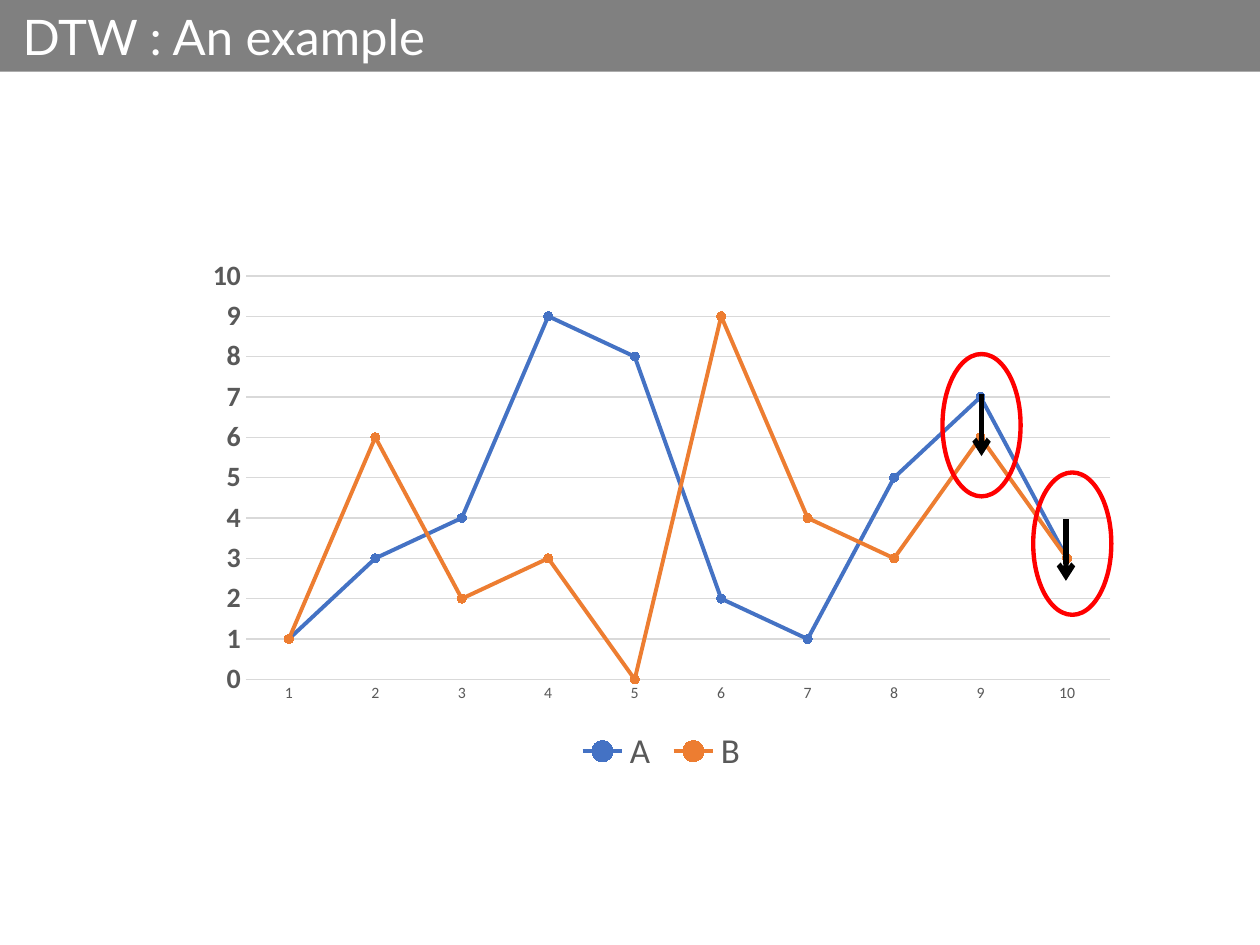
from pptx import Presentation
from pptx.chart.data import CategoryChartData as ChartData
from pptx.dml.color import RGBColor
from pptx.enum.chart import XL_CHART_TYPE as Kind, XL_LEGEND_POSITION as Place
from pptx.enum.chart import XL_MARKER_STYLE as Mark, XL_TICK_MARK as Tick
from pptx.enum.shapes import MSO_CONNECTOR as Link, MSO_SHAPE as Form
from pptx.enum.text import MSO_ANCHOR as Anchor, PP_ALIGN as Align
from pptx.oxml.ns import qn
from pptx.util import Inches, Pt
from lxml.etree import SubElement

TITLE = "DTW : An example"
SERIES = [
    ("A", [1, 3, 4, 9, 8, 2, 1, 5, 7, 3], "4472C4"),
    ("B", [1, 6, 2, 3, 0, 9, 4, 3, 6, 3], "ED7D31"),
]
ARROWS = [(7.79, 3.13), (8.46, 4.12)]
RINGS = [(8.2, 3.75), (7.48, 2.81)]
DROP = 0.49
RING = (0.62, 1.13)
GRAY, PALE = "595959", "D9D9D9"


def paint(hue):
    return RGBColor.from_string(hue)


def style(font, size, hue, name="Calibri", bold=False):
    font.size, font.name, font.bold = Pt(size), name, bold
    font.color.rgb = paint(hue)


def stroke(line, hue, width):
    line.color.rgb = paint(hue)
    line.width = Pt(width)


def write(shape, text, **look):
    frame = shape.text_frame
    frame.word_wrap = True
    frame.vertical_anchor = Anchor.MIDDLE
    frame.margin_left = Inches(0.18)
    para = frame.paragraphs[0]
    para.alignment = Align.LEFT
    run = para.add_run()
    run.text = text
    style(run.font, **look)


def add_form(form, *box):
    shape = slide.shapes.add_shape(form, *map(Inches, box))
    shape.shadow.inherit = False
    return shape


def add_plot():
    data = ChartData()
    data.categories = [str(n) for n in range(1, 11)]
    for name, vals, _ in SERIES:
        data.add_series(name, vals)
    box = map(Inches, (1.54, 1.97, 7.42, 4.22))
    chart = slide.shapes.add_chart(Kind.LINE_MARKERS, *box, data).chart
    style(chart.font, 10, "000000")
    chart.has_title = False
    chart.has_legend = True
    chart.legend.position = Place.BOTTOM
    chart.legend.include_in_layout = False
    style(chart.legend.font, 20, GRAY)
    chart.plots[0].vary_by_categories = False
    for line, (_, _, hue) in zip(chart.plots[0].series, SERIES):
        line.smooth = False
        stroke(line.format.line, hue, 2.25)
        mark = line.marker
        mark.style, mark.size = Mark.CIRCLE, 5
        mark.format.fill.solid()
        mark.format.fill.fore_color.rgb = paint(hue)
        stroke(mark.format.line, hue, 0.75)
    base, side = chart.category_axis, chart.value_axis
    for axis in (base, side):
        axis.major_tick_mark = axis.minor_tick_mark = Tick.NONE
    style(base.tick_labels.font, 9, GRAY)
    style(side.tick_labels.font, 16, GRAY, bold=True)
    stroke(base.format.line, PALE, 0.75)
    side.format.line.fill.background()
    side.minimum_scale, side.maximum_scale, side.major_unit = 0, 10, 1
    stroke(side.major_gridlines.format.line, PALE, 0.75)


def add_arrow(x, y):
    ends = map(Inches, (x, y, x, y + DROP))
    arrow = slide.shapes.add_connector(Link.STRAIGHT, *ends)
    stroke(arrow.line, "000000", 3)
    SubElement(arrow.line._get_or_add_ln(), qn("a:tailEnd"), type="arrow")
    SubElement(arrow._element.spPr, qn("a:effectLst"))


deck = Presentation()
deck.slide_width, deck.slide_height = Inches(10), Inches(7.5)
slide = deck.slides.add_slide(deck.slide_layouts[6])

add_plot()
bar = add_form(Form.RECTANGLE, 0, 0, 10, 0.57)
bar.fill.solid()
bar.fill.fore_color.rgb = paint("808080")
bar.line.fill.background()
write(bar, TITLE, size=28, hue="FFFFFF", name="Lato")

for x, y in ARROWS:
    add_arrow(x, y)
for x, y in RINGS:
    ring = add_form(Form.OVAL, x, y, *RING)
    ring.fill.background()
    stroke(ring.line, "FF0000", 2.5)

deck.save("out.pptx")
